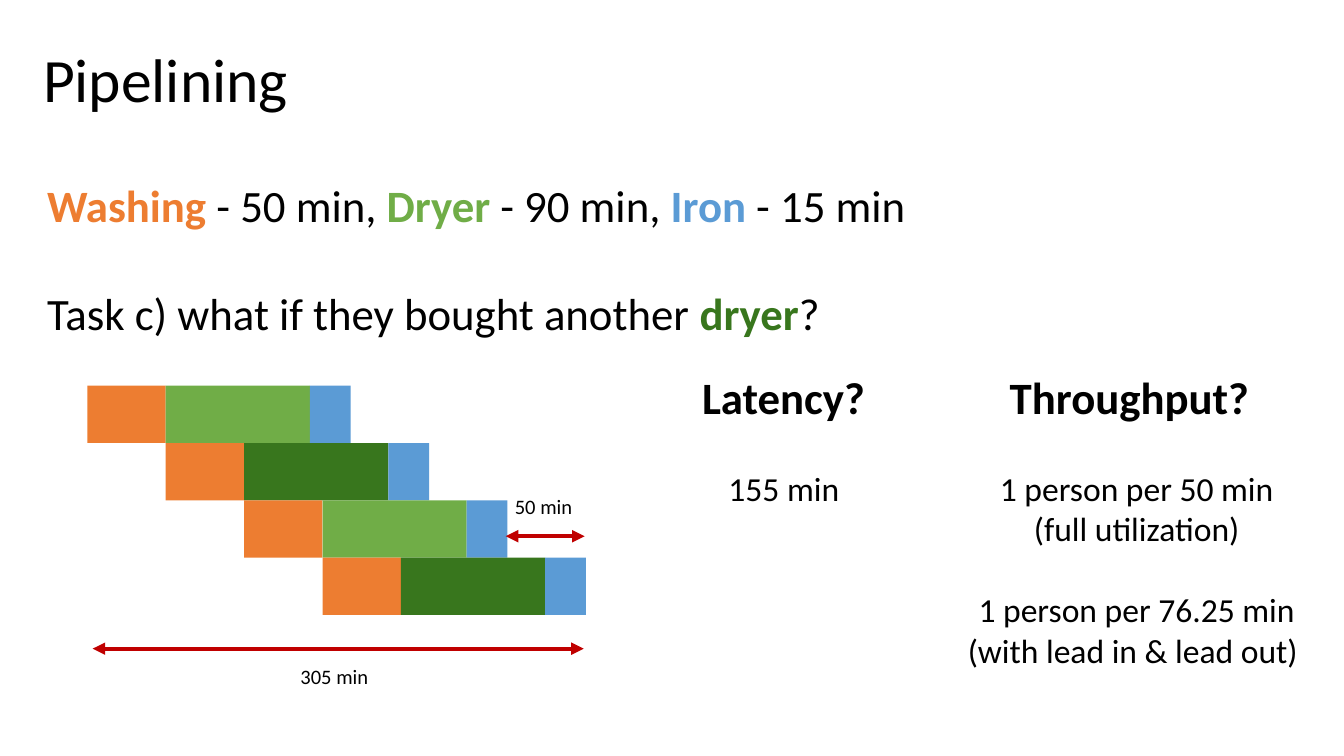
from dataclasses import dataclass

from lxml import etree
from pptx import Presentation
from pptx.dml.color import RGBColor as RGB
from pptx.enum.shapes import MSO_CONNECTOR as Link, MSO_SHAPE as Shape
from pptx.enum.text import MSO_ANCHOR as Anchor, MSO_AUTO_SIZE as Fit, PP_ALIGN as Align
from pptx.oxml.ns import qn
from pptx.util import Pt

PX = 3048  # EMU per px, 300 px to the inch


@dataclass(frozen=True)
class Theme:
    font: str = "Calibri"
    ink: str = "000000"
    wash: str = "ED7D31"
    dryer: str = "70AD47"
    second_dryer: str = "38761D"
    iron: str = "5B9BD5"
    arrow: str = "C00000"
    title: int = 33
    body: int = 24
    answer: int = 18
    label: int = 11


theme = Theme()


def style(run, size, color=theme.ink, bold=False):
    formats = {"name": theme.font, "size": Pt(size), "bold": bold}
    for key, value in formats.items():
        setattr(run.font, key, value)
    run.font.color.rgb = RGB.from_string(color)


def place(shape, box, inset, anchor=Anchor.TOP):
    for side, value in zip(("left", "top", "width", "height"), box):
        setattr(shape, side, value * PX)
    frame = shape.text_frame
    formats = {"word_wrap": True, "auto_size": Fit.NONE, "vertical_anchor": anchor}
    formats.update({f"margin_{side}": inset * PX for side in ("left", "top", "right", "bottom")})
    for key, value in formats.items():
        setattr(frame, key, value)
    return frame


# Widescreen slide, 16 to 9
deck = Presentation()
deck.slide_width = 3000 * PX
deck.slide_height = deck.slide_width * 9 // 16
slide = deck.slides.add_slide(deck.slide_layouts[1])
shapes = slide.shapes

# Title
heading = place(shapes.title, (84, 1, 2832, 366), 12, Anchor.MIDDLE).paragraphs[0]
heading.text = "Pipelining"
heading.alignment = Align.LEFT
heading.line_spacing = 0.9
style(heading.runs[0], theme.title)

# Stage times and the task
statements = [
    (0, [("Washing ", theme.wash), ("- 50 min, ", None), ("Dryer ", theme.dryer),
         ("- 90 min, ", None), ("Iron ", theme.iron), ("- 15 min", None)]),
    (29, [("Task c) what if they bought another ", None),
          ("dryer", theme.second_dryer), ("?", None)]),
]
body = place(slide.placeholders[1], (84, 376, 2832, 1125), 21)
for number, (gap, parts) in enumerate(statements):
    statement = body.add_paragraph() if number else body.paragraphs[0]
    statement.space_before = Pt(gap)
    for words, accent in parts:
        run = statement.add_run()
        run.text = words
        style(run, theme.body, accent or theme.ink, bold=accent is not None)
    props = statement._p.get_or_add_pPr()
    props.set("marL", "0")
    props.set("indent", "0")
    etree.SubElement(props, qn("a:buNone"))

# Staircase of loads: each starts one wash later, dryers alternate
WASH, DRY, IRON, ROW = 175, 322, 91, 128
for load in range(4):
    left, top = 195 + load * WASH, 861 + load * ROW
    dryer = theme.second_dryer if load % 2 else theme.dryer
    for width, color in ((WASH, theme.wash), (DRY, dryer), (IRON, theme.iron)):
        stage = shapes.add_shape(Shape.RECTANGLE, left * PX, top * PX, width * PX, ROW * PX)
        stage.shadow.inherit = False
        stage.fill.solid()
        stage.fill.fore_color.rgb = RGB.from_string(color)
        stage.line.fill.background()
        left += width

# Questions, answers and duration labels
captions = [
    ((2095, 810, 852, 258), theme.body, True, ["Throughput?"]),
    ((1323, 810, 852, 258), theme.body, True, ["Latency?"]),
    ((1396, 1014, 708, 207), theme.answer, False, ["155 min"]),
    ((2107, 1014, 861, 207), theme.answer, False,
     ["1 person per 50 min\n(full utilization)",
      "1 person per 76.25 min\n(with lead in & lead out) "]),
    ((1083, 1072, 261, 138), theme.label, False, ["50 min"]),
    ((196, 1452, 1101, 138), theme.label, False, ["305 min"]),
]
for box, size, bold, lines in captions:
    frame = place(shapes.add_textbox(0, 0, 0, 0), box, 30)
    for number, words in enumerate(lines):
        caption = frame.add_paragraph() if number else frame.paragraphs[0]
        caption.text = words
        caption.alignment = Align.CENTER
        if bold:
            caption.line_spacing = 0.9
            caption.space_before = Pt(10)
        elif number:
            caption.space_before = Pt(22)
        for run in caption.runs:
            style(run, size, bold=bold)

# Duration arrows
for start, end, y in ((1129, 1305, 1197), (207, 1303, 1448)):
    span = shapes.add_connector(Link.STRAIGHT, start * PX, y * PX, end * PX, y * PX)
    span.line.color.rgb = RGB.from_string(theme.arrow)
    span.line.width = Pt(2.25)
    outline = span.line._get_or_add_ln()
    for tip in ("a:headEnd", "a:tailEnd"):
        etree.SubElement(outline, qn(tip), type="triangle")
    etree.SubElement(span._element.spPr, qn("a:effectLst"))

deck.save("out.pptx")
